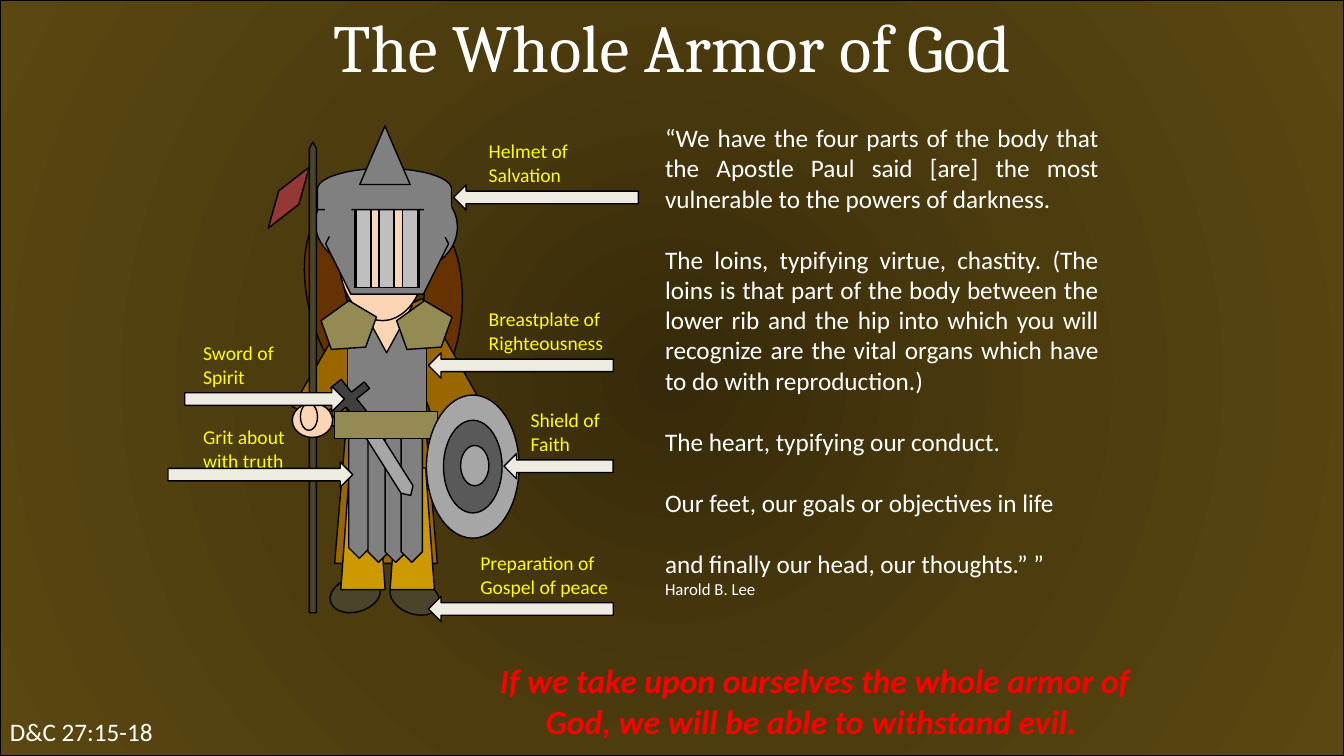
"""Build the slide "The Whole Armor of God" with a labelled knight figure."""
from lxml import etree
from pptx import Presentation
from pptx import util as u
from pptx.dml.color import RGBColor
from pptx.enum import shapes, text
from pptx.oxml import ns

KIND = shapes.MSO_SHAPE
ALIGN = text.PP_ALIGN

COLORS = {
    "black": "000000", "white": "FFFFFF", "yellow": "FFFF00", "red": "FF0000",
    "center": "362A0A", "middle": "4D3C0E", "edge": "5B4711", "arrow": "EEECE1",
    "hair": "663300", "boot": "4A452A", "tunic": "996600", "trousers": "CC9900",
    "steel": "808080", "skin": "FCD5B5", "bar": "BFBFBF", "leather": "948A54",
    "flag": "953735", "hilt": "404040", "silver": "A6A6A6", "rim": "595959",
}

TITLE = "The Whole Armor of God"
REFERENCE = "D&C 27:15-18"
QUOTE = [
    "“We have the four parts of the body that the Apostle Paul said [are] the most "
    "vulnerable to the powers of darkness. ",
    "The loins, typifying virtue, chastity. (The loins is that part of the body between "
    "the lower rib and the hip into which you will recognize are the vital organs which "
    "have to do with reproduction.)",
    "The heart, typifying our conduct. ",
    "Our feet, our goals or objectives in life",
    "and finally our head, our thoughts.” ” ",
]
SPEAKER = "Harold B. Lee"
PROMISE = ("If we take upon ourselves the whole armor of God, "
           "we will be able to withstand evil. ")

# label, (left, top, width), arrow (left, width), gap from label top, rotation
LABELS = [
    ("Helmet of Salvation", (342, 96, 78), (324, 132), 36, 0),
    ("Breastplate of Righteousness", (342, 216, 108), (306, 132), 36, 0),
    ("Preparation of Gospel of peace", (336, 390, 114), (306, 132), 36, 0),
    ("Shield of Faith", (372, 288, 78), (360, 78), 36, 0),
    ("Sword of Spirit", (138, 240, 78), (132, 114), 36, 180),
    ("Grit about with truth", (138, 300, 78), (120, 132), 30, 180),
]

TAPER = KIND.FLOWCHART_MANUAL_OPERATION
BODY = [
    (KIND.MOON, "hair", (221, 151.9, 31.7, 134.6), 346.1, 0.875),
    (KIND.MOON, "hair", (298.1, 157, 31.7, 131.8), 184.8, 0.875),
    (KIND.OVAL, "boot", (235.4, 412.6, 36.7, 24.5), 344.3),
    (KIND.OVAL, "boot", (277.9, 414, 36.7, 24.5), 20.7),
    (TAPER, "tunic", (239, 228.2, 73.4, 174.2), 180),
    (TAPER, "tunic", (291.6, 213.8, 37.4, 90), 155.2),
    (TAPER, "tunic", (224.6, 220.3, 37.4, 82.1), 205.1),
    (KIND.RECTANGLE, "steel", (248.4, 221.8, 56.2, 84.2)),
    (KIND.ISOSCELES_TRIANGLE, "skin", (257.8, 218.2, 36.7, 33.8), 180),
    (KIND.OVAL, "skin", (241.9, 136.8, 62.6, 92.2)),
]
HELMET = [
    (KIND.MOON, "steel", (225.4, 128.2, 31.7, 58.3), 9.3, 0.875),
    (KIND.MOON, "steel", (294.5, 129.6, 31.7, 58.3), 162.5, 0.875),
    (KIND.HEXAGON, "steel", (232.6, 138.2, 87.8, 72)),
    (KIND.RECTANGLE, "skin", (253.4, 142.6, 46.1, 62.6)),
    *[(KIND.RECTANGLE, "bar", (254.2 + 16.6 * i, 142.6, 10.8, 62.6)) for i in range(3)],
    (KIND.FLOWCHART_DELAY, "steel", (259.9, 87.1, 29.5, 95.8), 270),
    (KIND.ISOSCELES_TRIANGLE, "steel", (257, 90, 36, 41.8)),
    (KIND.OVAL, "steel", (232.6, 131.8, 18, 41.8), 0, None, "steel"),
    (KIND.OVAL, "steel", (303.8, 133.9, 18.7, 36), 349.8, None, "steel"),
]
ARMS = [
    *[(KIND.REGULAR_PENTAGON, "leather", (x, 213.8, 35.3, 38.2), 70.2)
      for x in (233.3, 287.3)],
    (KIND.PENTAGON, "boot", (55.4, 267.1, 336.2, 5), 270, 0.909),
    (KIND.FLOWCHART_DECISION, "flag", (180, 132.5, 52.6, 17.3), 303.9),
    (KIND.CROSS, "hilt", (232.6, 270.7, 33.1, 29.5), 321.4, 0.398),
    (KIND.OVAL, "skin", (208.8, 288, 28.8, 24.5)),
    *[(TAPER, "trousers", (x, 334.1, 31.7, 87.1), 180) for x in (278.6, 243.4)],
    *[(KIND.PENTAGON, "steel", (x, y, 95.8, 15.1), 90)
      for x, y in ((208.8, 343.4), (222.5, 346.3), (234.7, 346.3), (246.2, 346.3))],
    (KIND.OVAL, "skin", (214.6, 288, 12.2, 19.4)),
    (KIND.PENTAGON, "silver", (247, 323.3, 60.5, 10.1), 57.7),
    (KIND.RECTANGLE, "leather", (239, 293.8, 73.4, 19.4)),
    (KIND.OVAL, "silver", (304.6, 282.2, 66.2, 102.2)),
    (KIND.OVAL, "rim", (316.8, 300.2, 41.8, 66.2)),
    (KIND.OVAL, "silver", (329, 318.2, 20.2, 28.8)),
]


def rgb(name):
    return RGBColor.from_string(COLORS[name])


def add_part(parent, kind, fill, box, turn=0, adjust=None, outline="black"):
    part = parent.add_shape(kind, *map(u.Pt, box))
    part.shadow.inherit = False
    part.rotation = turn
    if adjust is not None:
        part.adjustments[0] = adjust
    part.fill.solid()
    part.fill.fore_color.rgb = rgb(fill)
    part.line.color.rgb = rgb(outline)
    part.line.width = u.Pt(1)
    return part


def add_words(slide, box, paragraphs, color, font="Calibri", align=ALIGN.LEFT):
    frame = slide.shapes.add_textbox(*map(u.Pt, box)).text_frame
    frame.word_wrap = True
    frame.auto_size = text.MSO_AUTO_SIZE.SHAPE_TO_FIT_TEXT
    for i, (words, size, gap) in enumerate(paragraphs):
        line = frame.add_paragraph() if i else frame.paragraphs[0]
        line.alignment = align
        line.space_after = u.Pt(gap)
        run = line.add_run()
        run.text = words
        run.font.size = u.Pt(size)
        run.font.name = font
        run.font.color.rgb = rgb(color)
    return run


def shade_from_center(backdrop):
    stops = "".join(
        f'<a:gs pos="{pos}"><a:srgbClr val="{COLORS[name]}"/></a:gs>'
        for pos, name in ((0, "center"), (50000, "middle"), (100000, "edge")))
    gradient = etree.fromstring(
        f'<a:gradFill {ns.nsdecls("a")} rotWithShape="1"><a:gsLst>{stops}</a:gsLst>'
        '<a:path path="circle"><a:fillToRect l="50000" t="50000" r="50000" b="50000"/>'
        '</a:path></a:gradFill>')
    properties = backdrop.element.spPr
    properties.replace(properties.find(ns.qn("a:solidFill")), gradient)


def outline_letters(run, color, width):
    edge = etree.Element(ns.qn("a:ln"), w=str(u.Pt(width)))
    fill = etree.SubElement(edge, ns.qn("a:solidFill"))
    etree.SubElement(fill, ns.qn("a:srgbClr"), val=COLORS[color])
    run._r.get_or_add_rPr().insert(0, edge)


def main():
    deck = Presentation()
    deck.slide_width, deck.slide_height = u.Pt(960), u.Pt(540)
    slide = deck.slides.add_slide(deck.slide_layouts[6])

    shade_from_center(add_part(slide.shapes, KIND.RECTANGLE, "middle", (0, 0, 960, 540)))
    add_words(slide, (120, 0, 720, 65.5), [(TITLE, 48, 0)], "white", "Cambria", ALIGN.CENTER)
    add_words(slide, (0, 508.3, 150, 29), [(REFERENCE, 18, 0)], "white")
    quote = [(words, 18, 22) for words in QUOTE[:-1]]
    quote += [(QUOTE[-1], 18, 0), (SPEAKER, 12, 0)]
    add_words(slide, (468, 84, 324, 356.4), quote, "white", align=ALIGN.JUSTIFY)

    knight = slide.shapes.add_group_shape()
    for part in BODY + HELMET + ARMS:
        add_part(knight.shapes, *part)

    promise = add_words(slide, (348, 468, 468, 65.5), [(PROMISE, 24, 0)], "red",
                        align=ALIGN.CENTER)
    promise.font.bold = promise.font.italic = True
    outline_letters(promise, "red", 0.75)

    for label, (left, top, width), (start, length), gap, turn in LABELS:
        add_words(slide, (left, top, width, 41), [(label, 14, 0)], "yellow")
        add_part(slide.shapes, KIND.LEFT_ARROW, "arrow", (start, top + gap, length, 18), turn)

    deck.save("out.pptx")


if __name__ == "__main__":
    main()
